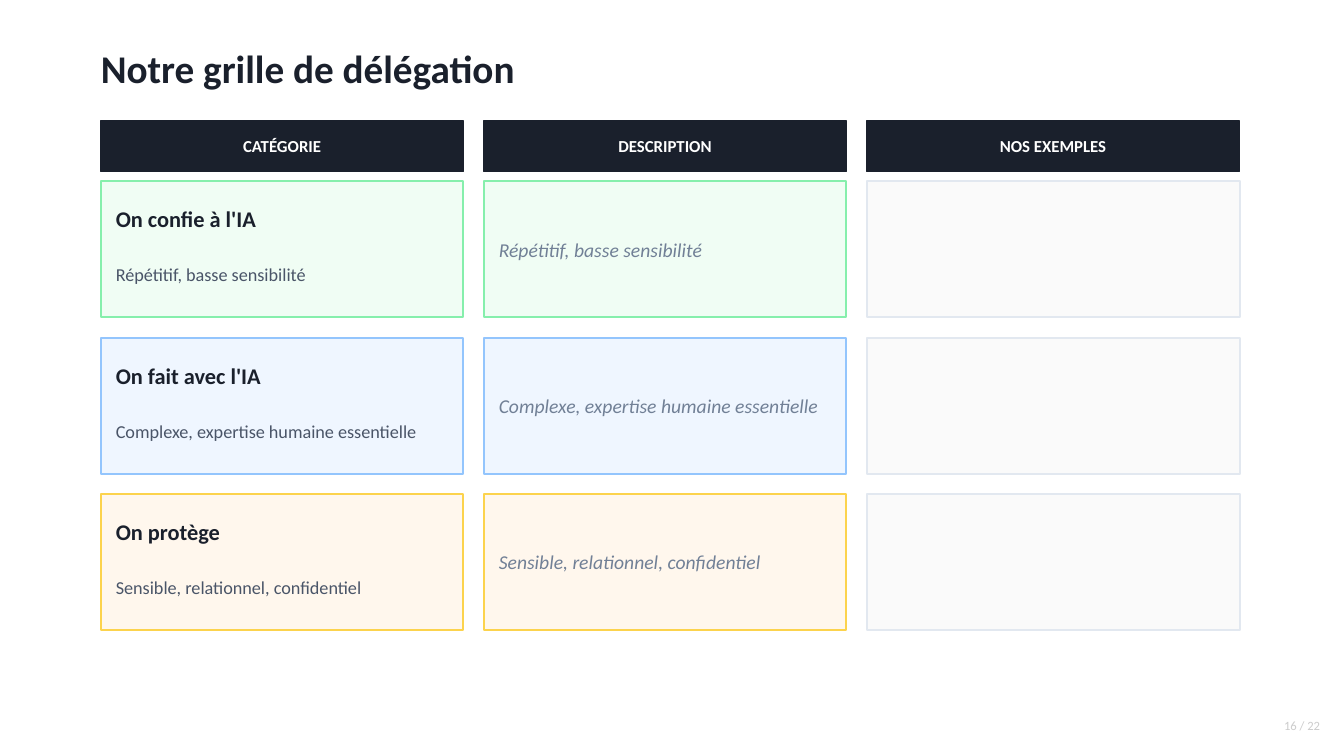
from dataclasses import dataclass

import pptx
import pptx.dml.color
import pptx.enum.shapes
import pptx.enum.text
import pptx.util
from pptx.dml.color import RGBColor
from pptx.enum.text import PP_ALIGN
from pptx.util import Cm

INK = RGBColor(0x1A, 0x20, 0x2C)
WHITE = RGBColor(0xFF, 0xFF, 0xFF)
SLATE = RGBColor(0x4A, 0x55, 0x68)
GREY = RGBColor(0x71, 0x80, 0x96)
PALE_GREY = RGBColor(0xCC, 0xCC, 0xCC)
BLANK_FILL = RGBColor(0xFA, 0xFA, 0xFA)
BLANK_LINE = RGBColor(0xE2, 0xE8, 0xF0)
GREEN_FILL = RGBColor(0xF0, 0xFD, 0xF4)
GREEN_LINE = RGBColor(0x86, 0xEF, 0xAC)
BLUE_FILL = RGBColor(0xEF, 0xF6, 0xFF)
BLUE_LINE = RGBColor(0x93, 0xC5, 0xFD)
AMBER_FILL = RGBColor(0xFF, 0xF7, 0xED)
AMBER_LINE = RGBColor(0xFC, 0xD3, 0x4D)

FONT = "Calibri"
PADDING = Cm(0.38)
HEADER_TOP, HEADER_HEIGHT = Cm(3.05), Cm(1.27)
ROW_TOP, ROW_HEIGHT, ROW_PITCH = Cm(4.57), Cm(3.43), Cm(3.94)
LABEL_OFFSET, LABEL_HEIGHT = Cm(0.25), Cm(1.4)


@dataclass(frozen=True)
class Column:
    heading: str
    left: int
    width: int


@dataclass(frozen=True)
class Category:
    name: str
    description: str
    fill: RGBColor
    line: RGBColor


COLUMNS = [
    Column("CATÉGORIE", Cm(2.54), Cm(9.14)),
    Column("DESCRIPTION", Cm(12.19), Cm(9.14)),
    Column("NOS EXEMPLES", Cm(21.84), Cm(9.4)),
]
CATEGORIES = [
    Category("On confie à l'IA", "Répétitif, basse sensibilité", GREEN_FILL, GREEN_LINE),
    Category("On fait avec l'IA", "Complexe, expertise humaine essentielle", BLUE_FILL, BLUE_LINE),
    Category("On protège", "Sensible, relationnel, confidentiel", AMBER_FILL, AMBER_LINE),
]


def write(shape, text: str, *, size: float, color: RGBColor, bold: bool = False,
          italic: bool = False, align: PP_ALIGN = PP_ALIGN.LEFT, padding: int = 0) -> None:
    frame = shape.text_frame
    frame.auto_size = pptx.enum.text.MSO_AUTO_SIZE.NONE
    frame.word_wrap = True
    frame.vertical_anchor = pptx.enum.text.MSO_ANCHOR.MIDDLE
    frame.margin_left = frame.margin_right = padding
    frame.margin_top = frame.margin_bottom = 0
    frame.text = text
    paragraph = frame.paragraphs[0]
    paragraph.alignment = align
    font = paragraph.runs[0].font
    font.name, font.size = FONT, pptx.util.Pt(size)
    font.bold, font.italic = bold, italic
    font.color.rgb = color


def add_cell(slide, column: Column, top: int, height: int, fill: RGBColor,
             line: RGBColor, line_width: float = 1.5):
    cell = slide.shapes.add_shape(pptx.enum.shapes.MSO_SHAPE.RECTANGLE,
                                  column.left, top, column.width, height)
    cell.shadow.inherit = False
    cell.fill.solid()
    cell.fill.fore_color.rgb = fill
    cell.line.color.rgb = line
    cell.line.width = pptx.util.Pt(line_width)
    return cell


def add_header(slide, column: Column) -> None:
    header = add_cell(slide, column, HEADER_TOP, HEADER_HEIGHT, INK, INK, 1)
    write(header, column.heading, size=12, color=WHITE, bold=True, align=PP_ALIGN.CENTER)


def add_category_row(slide, category: Category, top: int) -> None:
    category_column, description_column, examples_column = COLUMNS

    add_cell(slide, category_column, top, ROW_HEIGHT, category.fill, category.line)
    label_left = category_column.left + PADDING
    label_width = category_column.width - 2 * PADDING
    label_top = top + LABEL_OFFSET
    name = slide.shapes.add_textbox(label_left, label_top, label_width, LABEL_HEIGHT)
    write(name, category.name, size=16, color=INK, bold=True)
    summary = slide.shapes.add_textbox(label_left, label_top + LABEL_HEIGHT,
                                       label_width, LABEL_HEIGHT)
    write(summary, category.description, size=13, color=SLATE)

    description = add_cell(slide, description_column, top, ROW_HEIGHT,
                           category.fill, category.line)
    write(description, category.description, size=14, color=GREY, italic=True, padding=PADDING)

    add_cell(slide, examples_column, top, ROW_HEIGHT, BLANK_FILL, BLANK_LINE)


def main() -> None:
    deck = pptx.Presentation()
    deck.slide_width, deck.slide_height = Cm(33.87), Cm(19.05)
    slide = deck.slides.add_slide(deck.slide_layouts[5])

    title = slide.shapes.title
    title.left, title.top, title.width, title.height = Cm(2.54), Cm(0.89), Cm(27.94), Cm(1.65)
    write(title, "Notre grille de délégation", size=28, color=INK, bold=True)

    for column in COLUMNS:
        add_header(slide, column)
    for index, category in enumerate(CATEGORIES):
        add_category_row(slide, category, ROW_TOP + index * ROW_PITCH)

    page_number = slide.shapes.add_textbox(Cm(30.73), Cm(17.91), Cm(2.54), Cm(0.76))
    write(page_number, "16 / 22", size=9, color=PALE_GREY, align=PP_ALIGN.RIGHT)

    deck.save("out.pptx")


if __name__ == "__main__":
    main()
